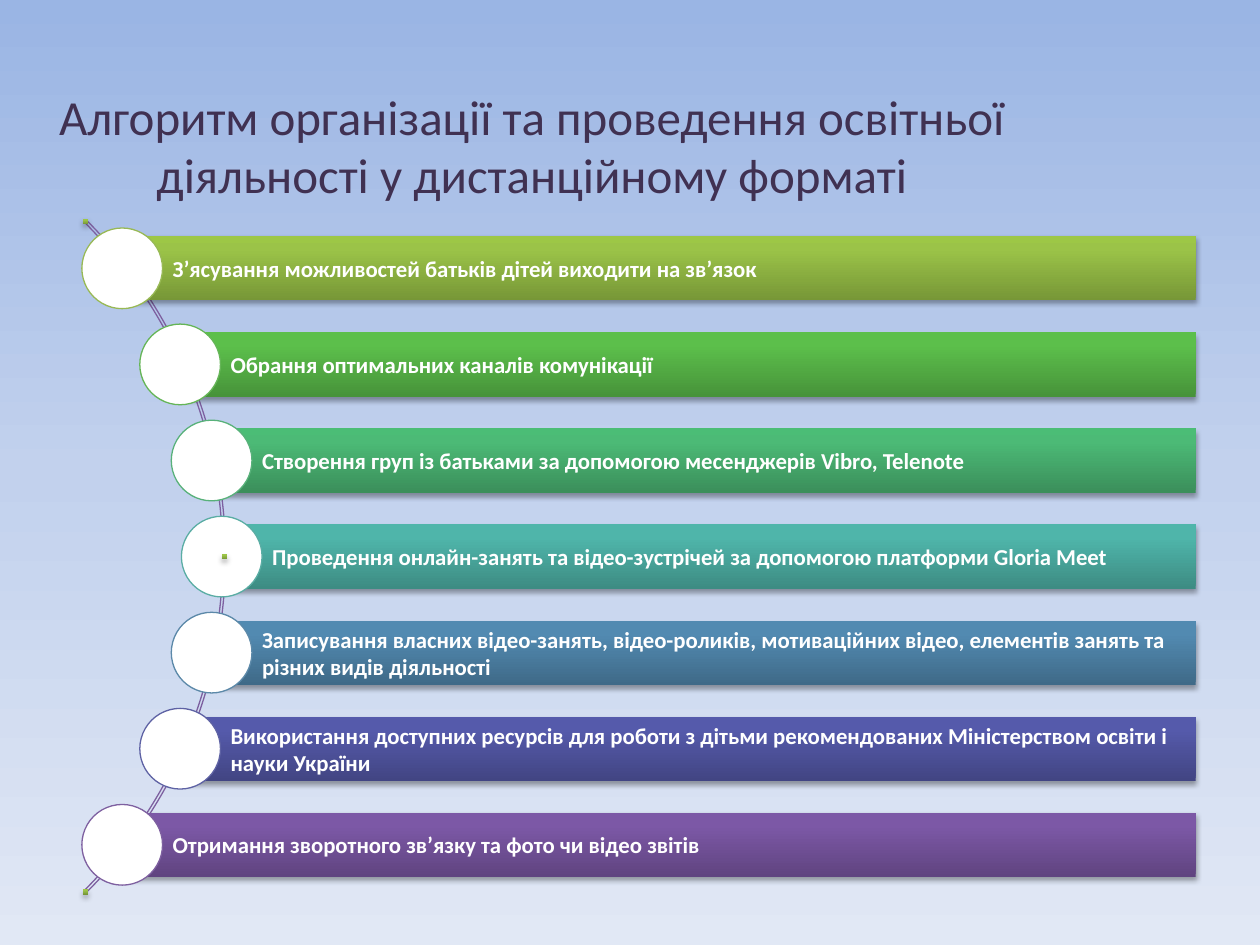
from copy import deepcopy
from dataclasses import dataclass

from lxml import etree
from pptx import Presentation
from pptx.dml.color import RGBColor
from pptx.enum.shapes import MSO_SHAPE as SHAPE
from pptx.enum.text import MSO_ANCHOR as ANCHOR, PP_ALIGN as ALIGN
from pptx.oxml.ns import qn
from pptx.util import Inches, Pt


@dataclass(frozen=True)
class Theme:
    font: str = "Calibri"
    title_size: int = 28
    step_size: int = 13
    line_width: float = 0.75
    title: str = "403152"
    white: str = "FFFFFF"
    arc: str = "7D60A0"
    background: tuple = ((0, "9AB5E4"), (0.5, "C2D1ED"), (1, "E1E8F5"))


THEME = Theme()
TITLE = "Алгоритм організації та проведення освітньої діяльності у дистанційному форматі"

# Step text, three bar gradient colours, circle outline
STEPS = [
    ("З’ясування можливостей батьків дітей виходити на зв’язок",
     ("779737", "9BC348", "9DC746"), "98B955"),
    ("Обрання оптимальних каналів комунікації",
     ("47933A", "5CBF4B", "5BC249"), "65B557"),
    ("Створення груп із батьками за допомогою месенджерів Vibro, Telenote",
     ("3B8F5B", "4CBA76", "4BBD76"), "58B17A"),
    ("Проведення онлайн-занять та відео-зустрічей за допомогою платформи Gloria Meet",
     ("3D8C83", "4FB5AA", "4EB8AC"), "5AADA4"),
    ("Записування власних відео-занять, відео-роликів, мотиваційних відео, "
     "елементів занять та різних видів діяльності",
     ("3F6A88", "528AB1", "518AB3"), "5C89A9"),
    ("Використання доступних ресурсів для роботи з дітьми рекомендованих "
     "Міністерством освіти і науки України",
     ("424583", "555AAB", "5459AD"), "5E62A4"),
    ("Отримання зворотного зв’язку та фото чи відео звітів",
     ("604480", "7C58A6", "7D57A8"), "7E60A0"),
]

# Layout in inches
BAR_LEFTS = (0.97, 1.43, 1.68, 1.76)  # mirrored below the middle step
BAR_RIGHT, BAR_HEIGHT = 9.49, 0.51
FIRST_CENTER, STEP_PITCH = 2.13, 0.7625
CIRCLE, DOT = 0.64, 0.04
DOTS = [(0.66, 1.74), (1.76, 4.4), (0.66, 7.06)]


def set_gradient(fill, element, stops, angle):
    """Three-stop linear gradient; the angle runs counter-clockwise."""
    fill.gradient()
    fill.gradient_angle = angle
    stop_list = next(element.iter(qn("a:gsLst")))
    stop_list.append(deepcopy(stop_list[0]))
    for stop, (position, color) in zip(fill.gradient_stops, stops):
        stop.position = position
        stop.color.rgb = RGBColor.from_string(color)


def add_shadow(sp):
    effects = sp._element.spPr.find(qn("a:effectLst"))
    shadow = etree.SubElement(effects, qn("a:outerShdw"), blurRad=str(Pt(3.1)),
                              dist=str(Pt(1.8)), dir="5400000", rotWithShape="0")
    color = etree.SubElement(shadow, qn("a:srgbClr"), val="000000")
    etree.SubElement(color, qn("a:alpha"), val="35000")


def add_shape(slide, kind, left, top, width, height, fill=None, line=None):
    sp = slide.shapes.add_shape(kind, Inches(left), Inches(top),
                                Inches(width), Inches(height))
    sp.shadow.inherit = False
    if fill:
        sp.fill.solid()
        sp.fill.fore_color.rgb = RGBColor.from_string(fill)
    else:
        sp.fill.background()
    if line:
        sp.line.color.rgb = RGBColor.from_string(line)
        sp.line.width = Pt(THEME.line_width)
    else:
        sp.line.fill.background()
    return sp


def add_glossy_rect(slide, left, top, width, height, colors):
    sp = add_shape(slide, SHAPE.RECTANGLE, left, top, width, height)
    set_gradient(sp.fill, sp._element, zip((0, 0.8, 1), colors), 90)
    add_shadow(sp)
    return sp


def write_text(sp, text, size, color, align, bold=False):
    tf = sp.text_frame
    tf.word_wrap = True
    tf.vertical_anchor = ANCHOR.MIDDLE
    tf.text = text
    p = tf.paragraphs[0]
    p.alignment = align
    font = p.runs[0].font
    font.name, font.size, font.bold = THEME.font, Pt(size), bold
    font.color.rgb = RGBColor.from_string(color)


def add_step(slide, index, text, colors, outline):
    left = BAR_LEFTS[min(index, len(STEPS) - 1 - index)]
    center = FIRST_CENTER + index * STEP_PITCH
    bar = add_glossy_rect(slide, left, center - BAR_HEIGHT / 2,
                          BAR_RIGHT - left, BAR_HEIGHT, colors)
    tf = bar.text_frame
    tf.margin_left = Inches(0.4)
    tf.margin_top = tf.margin_right = tf.margin_bottom = Inches(0.04)
    write_text(bar, text, THEME.step_size, THEME.white, ALIGN.LEFT, bold=True)
    add_shape(slide, SHAPE.OVAL, left - CIRCLE / 2, center - CIRCLE / 2,
              CIRCLE, CIRCLE, THEME.white, outline)


def main():
    prs = Presentation()
    prs.slide_width, prs.slide_height = Inches(10), Inches(7.5)
    slide = prs.slides.add_slide(prs.slide_layouts[6])
    set_gradient(slide.background.fill, slide._element, THEME.background, 270)

    # Title
    title = slide.shapes.add_textbox(Inches(0.28), Inches(0.44),
                                     Inches(7.88), Inches(1.42))
    write_text(title, TITLE, THEME.title_size, THEME.title, ALIGN.CENTER)

    # Arc behind the steps
    arc = add_shape(slide, SHAPE.BLOCK_ARC, -5.76, 0.64, 7.55, 7.55, line=THEME.arc)
    for i, value in enumerate((189, 27, 0.003)):
        arc.adjustments[i] = value

    # Steps along the arc
    for i, step in enumerate(STEPS):
        add_step(slide, i, *step)

    # Marks at the start, middle and end of the arc
    for left, top in DOTS:
        add_glossy_rect(slide, left, top, DOT, DOT, STEPS[0][1])

    prs.save("out.pptx")


if __name__ == "__main__":
    main()
